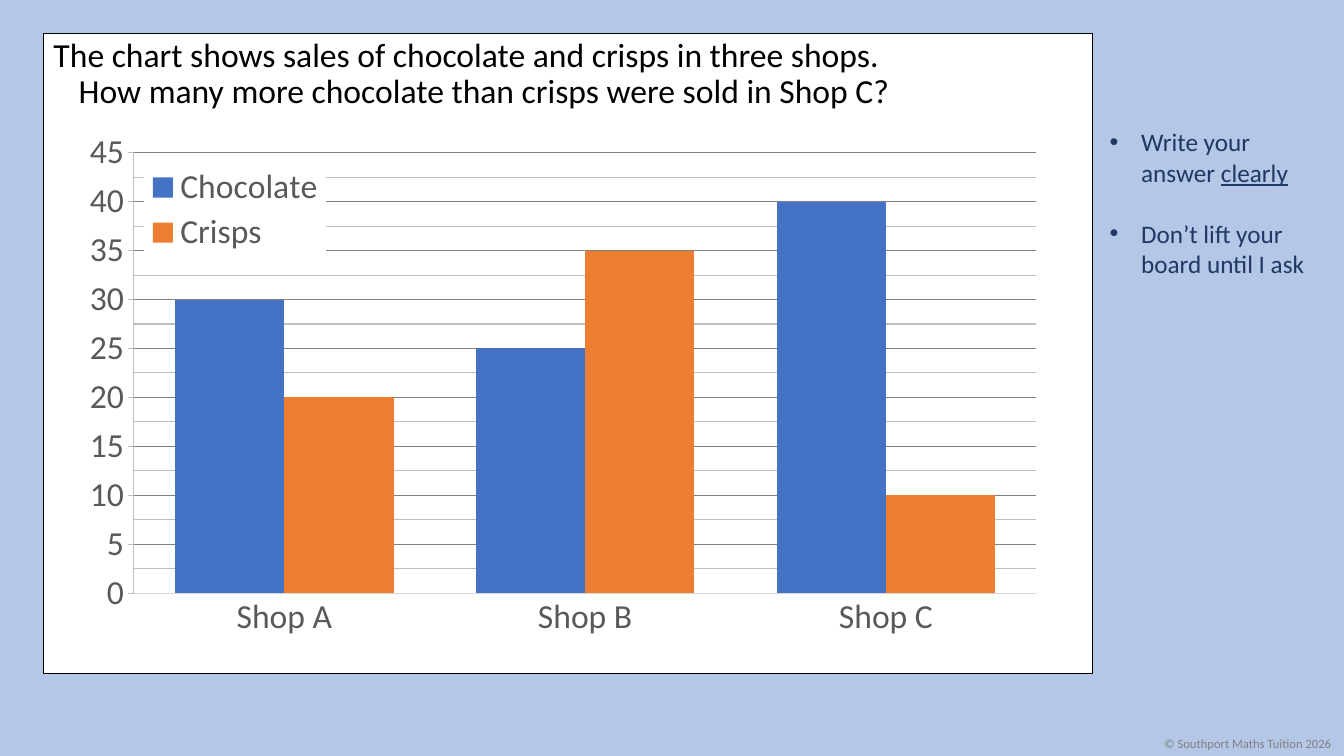
from lxml import etree
from pptx import Presentation
from pptx.chart.data import CategoryChartData
from pptx.dml.color import RGBColor
from pptx.enum.chart import XL_CHART_TYPE, XL_LEGEND_POSITION, XL_TICK_MARK
from pptx.enum.shapes import MSO_SHAPE
from pptx.enum.text import MSO_ANCHOR, MSO_AUTO_SIZE, PP_ALIGN
from pptx.oxml.ns import qn
from pptx.util import Pt

RECTANGLE = MSO_SHAPE.RECTANGLE
COLUMN_CLUSTERED = XL_CHART_TYPE.COLUMN_CLUSTERED
LEGEND_RIGHT = XL_LEGEND_POSITION.RIGHT
TICK_NONE, TICK_OUTSIDE = XL_TICK_MARK.NONE, XL_TICK_MARK.OUTSIDE
TOP, LEFT = MSO_ANCHOR.TOP, PP_ALIGN.LEFT
NO_AUTOFIT = MSO_AUTO_SIZE.NONE
FIT_SHAPE = MSO_AUTO_SIZE.SHAPE_TO_FIT_TEXT

PALE_BLUE = RGBColor(0xB4, 0xC7, 0xE7)
WHITE = RGBColor(0xFF, 0xFF, 0xFF)
BLACK = RGBColor(0x00, 0x00, 0x00)
NAVY = RGBColor(0x20, 0x38, 0x64)
GREY = RGBColor(0x80, 0x80, 0x80)
DARK_GREY = RGBColor(0x59, 0x59, 0x59)
MID_GREY = RGBColor(0xBF, 0xBF, 0xBF)
LIGHT_GREY = RGBColor(0xD9, 0xD9, 0xD9)
BLUE = RGBColor(0x44, 0x72, 0xC4)
ORANGE = RGBColor(0xED, 0x7D, 0x31)

FRAME = (31, 24, 749.5, 457)
SHOPS = ("Shop A", "Shop B", "Shop C")
SALES = (("Chocolate", (30, 25, 40), BLUE), ("Crisps", (20, 35, 10), ORANGE))
QUESTION = (
    "The chart shows sales of chocolate and crisps in three shops.",
    "How many more chocolate than crisps were sold in Shop C?",
)
REMINDERS = (
    (("Write your answer ", False), ("clearly", True)),
    (("Don’t lift your board until I ask", False),),
)


class QuizSlide:
    """Draws the elements of a quiz slide in one shared style."""

    font_name = "Calibri"
    line_width = Pt(0.75)

    def __init__(self, presentation):
        self.slide = presentation.slides.add_slide(presentation.slide_layouts[5])
        fill = self.slide.background.fill
        fill.solid()
        fill.fore_color.rgb = PALE_BLUE

    def style_font(self, font, size, color):
        font.name = self.font_name
        font.size = Pt(size)
        font.color.rgb = color

    def style_line(self, line, color):
        line.width = self.line_width
        line.color.rgb = color

    def add_run(self, paragraph, text, size, color):
        run = paragraph.add_run()
        run.text = text
        self.style_font(run.font, size, color)
        return run

    def indent(self, paragraph, hanging):
        properties = paragraph._p.get_or_add_pPr()
        properties.set("marL", str(Pt(hanging)))
        properties.set("indent", str(-Pt(hanging)))
        return properties

    def add_text_box(self, box, wrap):
        shape = self.slide.shapes.add_textbox(*map(Pt, box))
        shape.text_frame.word_wrap = wrap
        shape.text_frame.auto_size = FIT_SHAPE
        return shape.text_frame

    def add_title(self, box, lines):
        title = self.slide.shapes.title
        title.left, title.top, title.width, title.height = map(Pt, box)
        frame = title.text_frame
        frame.vertical_anchor = TOP
        frame.auto_size = NO_AUTOFIT
        paragraph = frame.paragraphs[0]
        paragraph.alignment = LEFT
        paragraph.line_spacing = 0.9
        self.indent(paragraph, 18)
        for index, line in enumerate(lines):
            if index:
                paragraph.add_line_break()
            self.add_run(paragraph, line, 24, BLACK)

    def add_frame(self, box):
        shape = self.slide.shapes.add_shape(RECTANGLE, *map(Pt, box))
        shape.shadow.inherit = False
        shape.fill.solid()
        shape.fill.fore_color.rgb = WHITE
        shape.line.color.rgb = BLACK
        shape.line.width = Pt(1)
        self.slide.shapes.title.element.addprevious(shape.element)

    def add_bullets(self, box, items):
        frame = self.add_text_box(box, True)
        for index, runs in enumerate(items):
            paragraph = frame.add_paragraph() if index else frame.paragraphs[0]
            properties = self.indent(paragraph, 22.5)
            if index:
                paragraph.space_before = Pt(22)
            etree.SubElement(properties, qn("a:buFont")).set("typeface", "Arial")
            etree.SubElement(properties, qn("a:buChar")).set("char", "•")
            for text, underlined in runs:
                run = self.add_run(paragraph, text, 18, NAVY)
                run.font.underline = underlined

    def add_footer(self, box, text):
        frame = self.add_text_box(box, False)
        self.add_run(frame.paragraphs[0], text, 9, GREY)

    def add_solid_fill(self, parent, color):
        fill = etree.SubElement(parent, qn("a:solidFill"))
        etree.SubElement(fill, qn("a:srgbClr")).set("val", str(color))

    def place(self, parent, index, inner, fractions):
        for old_layout in parent.findall(qn("c:layout")):
            parent.remove(old_layout)
        layout = etree.Element(qn("c:layout"))
        manual = etree.SubElement(layout, qn("c:manualLayout"))
        settings = [("layoutTarget", "inner")] if inner else []
        settings += [("xMode", "edge"), ("yMode", "edge")]
        settings += zip("xywh", fractions)
        for name, value in settings:
            etree.SubElement(manual, qn(f"c:{name}")).set("val", str(value))
        parent.insert(index, layout)

    def add_legend(self, chart):
        chart.has_legend = True
        legend = chart.legend
        legend.position = LEGEND_RIGHT
        legend.include_in_layout = True
        self.style_font(legend.font, 24, DARK_GREY)
        element = chart.element.xpath("c:chart/c:legend")[0]
        self.place(element, 1, False, (0.085, 0.07, 0.182, 0.175))
        properties = etree.Element(qn("c:spPr"))
        self.add_solid_fill(properties, WHITE)
        element.find(qn("c:txPr")).addprevious(properties)

    def add_minor_gridlines(self, chart):
        chart.value_axis.has_minor_gridlines = True
        gridlines = chart.element.xpath(".//c:valAx/c:minorGridlines")[0]
        properties = etree.SubElement(gridlines, qn("c:spPr"))
        line = etree.SubElement(properties, qn("a:ln"))
        line.set("w", str(self.line_width))
        self.add_solid_fill(line, MID_GREY)

    def add_column_chart(self, box, categories, series_list):
        data = CategoryChartData()
        data.categories = categories
        for name, values, _ in series_list:
            data.add_series(name, values)
        chart = self.slide.shapes.add_chart(COLUMN_CLUSTERED, *map(Pt, box), data).chart
        chart.has_title = False
        self.style_font(chart.font, 10, BLACK)
        plot = chart.plots[0]
        plot.gap_width = 75
        plot.overlap = 0
        plot.vary_by_categories = False
        for series, (_, _, color) in zip(plot.series, series_list):
            series.format.fill.solid()
            series.format.fill.fore_color.rgb = color
        axes = (
            (chart.category_axis, TICK_NONE, LIGHT_GREY),
            (chart.value_axis, TICK_OUTSIDE, MID_GREY),
        )
        for axis, tick, color in axes:
            axis.major_tick_mark = tick
            axis.minor_tick_mark = TICK_NONE
            self.style_line(axis.format.line, color)
            self.style_font(axis.tick_labels.font, 24, DARK_GREY)
        value_axis = chart.value_axis
        value_axis.minimum_scale, value_axis.maximum_scale = 0, 45
        value_axis.major_unit, value_axis.minor_unit = 5, 2.5
        self.style_line(value_axis.major_gridlines.format.line, GREY)
        self.add_minor_gridlines(chart)
        plot_area = chart.element.xpath("c:chart/c:plotArea")[0]
        self.place(plot_area, 0, True, (0.075, 0.051, 0.901, 0.817))
        self.add_legend(chart)


def main():
    presentation = Presentation()
    presentation.slide_width, presentation.slide_height = Pt(960), Pt(540)
    quiz = QuizSlide(presentation)
    quiz.add_frame(FRAME)
    quiz.add_title(FRAME, QUESTION)
    quiz.add_bullets((785.5, 87, 167, 117), REMINDERS)
    quiz.add_footer((824.5, 522, 135.5, 18), "© Southport Maths Tuition 2026")
    quiz.add_column_chart((42, 89.5, 715.5, 385), SHOPS, SALES)
    presentation.save("out.pptx")


if __name__ == "__main__":
    main()
